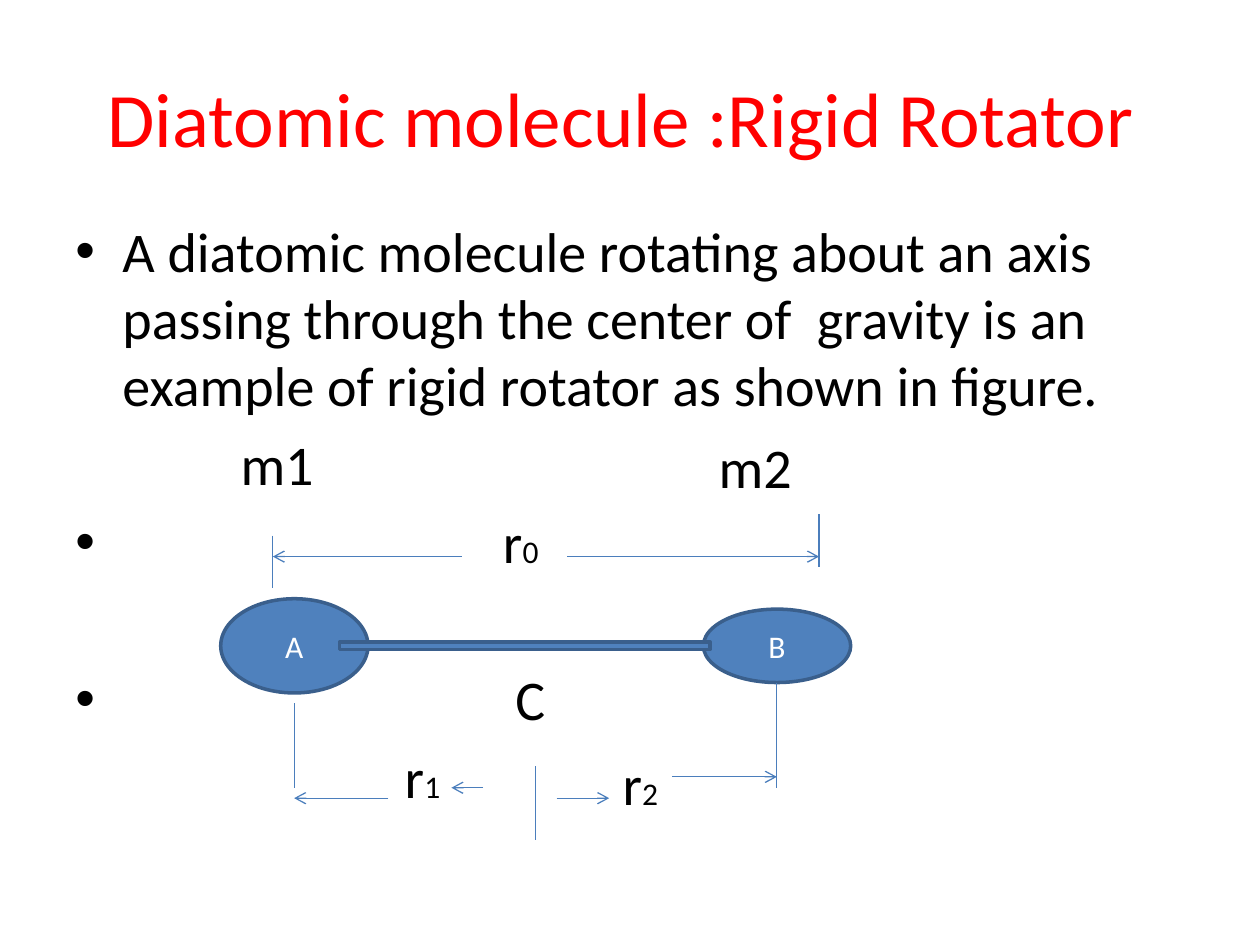
from dataclasses import dataclass

from lxml.etree import SubElement
from pptx import Presentation
from pptx.dml.color import RGBColor
from pptx.enum.shapes import MSO_CONNECTOR as Connector, MSO_SHAPE as Shape
from pptx.enum.text import MSO_ANCHOR as Anchor, PP_ALIGN as Align
from pptx.oxml.ns import qn
from pptx.util import Cm, Pt


@dataclass(frozen=True)
class Theme:
    font: str = "Calibri"
    title: str = "FF0000"
    text: str = "000000"
    label: str = "FFFFFF"
    fill: str = "4F81BD"
    outline: str = "3A5F8C"
    line: str = "4B7EBC"
    title_size: float = 44
    body_size: float = 32
    small_size: float = 18
    paragraph_gap: float = 6.4
    outline_width: float = 2
    line_width: float = 0.75


class SlideBuilder:
    def __init__(self, slide, theme):
        self.slide = slide
        self.theme = theme

    def add_run(self, paragraph, text, size, color):
        run = paragraph.add_run()
        run.text = text
        run.font.name = self.theme.font
        run.font.size = Pt(size)
        run.font.color.rgb = RGBColor.from_string(color)

    def text_frame(self, left, top, width, height, anchor=Anchor.TOP):
        box = self.slide.shapes.add_textbox(Cm(left), Cm(top), Cm(width), Cm(height))
        box.text_frame.word_wrap = True
        box.text_frame.vertical_anchor = anchor
        return box.text_frame

    def title(self, text, *place):
        paragraph = self.text_frame(*place, anchor=Anchor.MIDDLE).paragraphs[0]
        paragraph.alignment = Align.CENTER
        self.add_run(paragraph, text, self.theme.title_size, self.theme.title)

    def symbol(self, paragraph, letter, subscript=""):
        """Write a large text, followed by a small digit if one is given."""
        self.add_run(paragraph, letter, self.theme.body_size, self.theme.text)
        if subscript:
            self.add_run(paragraph, subscript, self.theme.small_size, self.theme.text)

    def body(self, rows, *place):
        frame = self.text_frame(*place)
        for index, (texts, indent, bullet, gap) in enumerate(rows):
            paragraph = frame.add_paragraph() if index else frame.paragraphs[0]
            paragraph.space_before = Pt(gap)
            properties = paragraph._p.get_or_add_pPr()
            properties.set("marL", str(Cm(indent)))
            properties.set("indent", str(-Cm(indent) if bullet else 0))
            if bullet:
                SubElement(properties, qn("a:buFont"), typeface="Arial")
                SubElement(properties, qn("a:buChar"), char="•")
            else:
                SubElement(properties, qn("a:buNone"))
            self.symbol(paragraph, *texts)

    def label(self, texts, *place):
        self.symbol(self.text_frame(*place).paragraphs[0], *texts)

    def shape(self, kind, left, top, width, height, label=""):
        theme = self.theme
        shape = self.slide.shapes.add_shape(kind, Cm(left), Cm(top), Cm(width), Cm(height))
        shape.shadow.inherit = False
        shape.fill.solid()
        shape.fill.fore_color.rgb = RGBColor.from_string(theme.fill)
        shape.line.color.rgb = RGBColor.from_string(theme.outline)
        shape.line.width = Pt(theme.outline_width)
        if label:
            shape.text_frame.vertical_anchor = Anchor.MIDDLE
            paragraph = shape.text_frame.paragraphs[0]
            paragraph.alignment = Align.CENTER
            self.add_run(paragraph, label, theme.small_size, theme.label)

    def line(self, x1, y1, x2, y2, arrow=False):
        connector = self.slide.shapes.add_connector(
            Connector.STRAIGHT, Cm(x1), Cm(y1), Cm(x2), Cm(y2))
        connector.line.color.rgb = RGBColor.from_string(self.theme.line)
        connector.line.width = Pt(self.theme.line_width)
        if arrow:
            SubElement(connector.line._get_or_add_ln(), qn("a:tailEnd"), type="arrow")
        SubElement(connector._element.spPr, qn("a:effectLst"))

    def arrow(self, start, end, y):
        self.line(start, y, end, y, arrow=True)

    def marker(self, x, top, bottom):
        self.line(x, top, x, bottom)


def main():
    presentation = Presentation()
    presentation.slide_width, presentation.slide_height = Cm(25.4), Cm(19.05)
    theme = Theme()
    builder = SlideBuilder(
        presentation.slides.add_slide(presentation.slide_layouts[6]), theme)
    gap = theme.paragraph_gap

    builder.title("Diatomic molecule :Rigid Rotator ", 1.27, 0.76, 22.86, 3.18)
    statement = ("A diatomic molecule rotating about an axis passing through the center "
                 "of  gravity is an example of rigid rotator as shown in figure.")
    builder.body([
        ((statement,), 0.95, True, gap),
        (("m1",), 3.33, False, gap),
        (("r", "0"), 8.62, True, gap),
        (("C",), 8.87, True, 51),
        (("r", "1"), 6.64, False, gap),
    ], 1.27, 4.24, 22.86, 12.57)
    builder.label(("m2",), 14.24, 8.6, 2.5, 1.63)
    builder.label(("r", "2"), 12.3, 14.98, 2, 1.63)

    builder.shape(Shape.OVAL, 4.45, 12.07, 2.97, 1.9, "A")
    builder.shape(Shape.OVAL, 14.18, 12.28, 2.97, 1.48, "B")
    builder.shape(Shape.MATH_MINUS, 5.5, 12.7, 10.16, 0.64)

    span_left, span_right = 5.5, 16.51
    center_a, center_b = 5.93, 15.66
    for start, end, y in [
        (11.43, span_right, 11.22), (9.31, span_left, 11.22),
        (11.22, 12.28, 16.09), (13.55, center_b, 15.66),
        (9.74, 9.1, 15.88), (7.83, center_a, 16.09),
    ]:
        builder.arrow(start, end, y)
    for x, top, bottom in [
        (span_left, 10.8, 11.85), (span_right, 10.37, 11.43),
        (center_a, 14.18, 15.88), (center_b, 13.76, 15.88),
        (10.8, 15.45, 16.93),
    ]:
        builder.marker(x, top, bottom)

    presentation.save("out.pptx")


if __name__ == "__main__":
    main()
